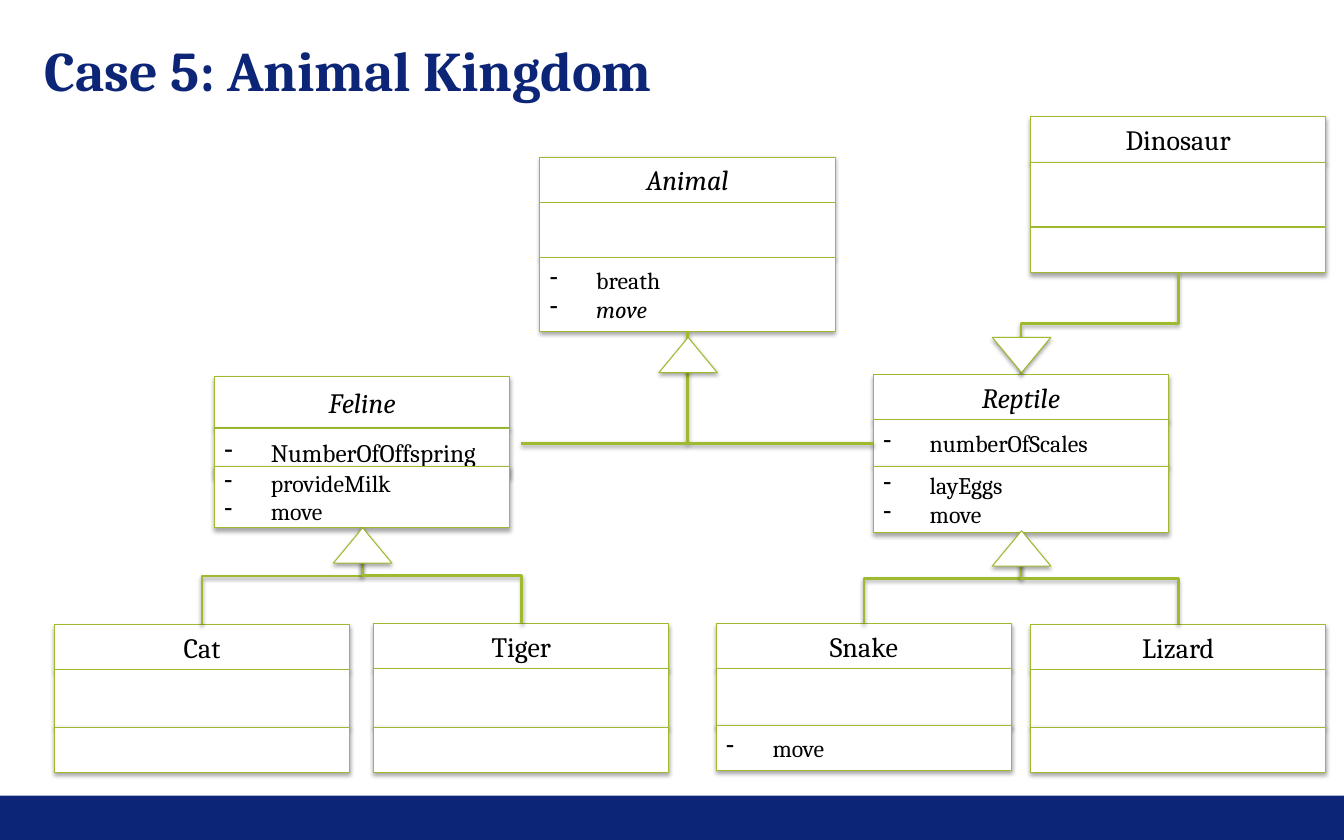
"""Build the Animal Kingdom class diagram slide."""
from lxml import etree
from pptx import Presentation
from pptx.dml.color import RGBColor
from pptx.enum.shapes import MSO_CONNECTOR, MSO_SHAPE
from pptx.enum.text import MSO_ANCHOR, MSO_AUTO_SIZE, PP_ALIGN
from pptx.oxml.ns import qn
from pptx.util import Inches, Pt

RECTANGLE, TRIANGLE = MSO_SHAPE.RECTANGLE, MSO_SHAPE.ISOSCELES_TRIANGLE
ELBOW, STRAIGHT = MSO_CONNECTOR.ELBOW, MSO_CONNECTOR.STRAIGHT
TOP, LEFT, BOTTOM = 0, 1, 2
COLORS = {"navy": "0C2577", "green": "9EBA2E", "white": "FFFFFF", "black": "000000"}
COLORS = {name: RGBColor.from_string(value) for name, value in COLORS.items()}
FONT = "Cambria"
BOX_WIDTH = 2.93
ROW = 0.45
ARROW_WIDTH, ARROW_HEIGHT = 0.58, 0.35
INDENT = Inches(0.46)


def style_outline(item, width):
    """Give a shape or connector its green line and soft shadow."""
    item.line.color.rgb = COLORS["green"]
    item.line.width = Pt(width)
    effects = etree.SubElement(item._element.spPr, qn("a:effectLst"))
    shadow = etree.SubElement(effects, qn("a:outerShdw"), blurRad=str(Pt(3.1)),
                              dist=str(Pt(1.8)), dir="5400000", rotWithShape="0")
    color = etree.SubElement(shadow, qn("a:srgbClr"), val="000000")
    etree.SubElement(color, qn("a:alpha"), val="35000")


def add_white_shape(kind, left, top, width, height):
    """Add a white shape with the diagram's outline."""
    shape = slide.shapes.add_shape(kind, Inches(left), Inches(top), Inches(width), Inches(height))
    shape.fill.solid()
    shape.fill.fore_color.rgb = COLORS["white"]
    style_outline(shape, 0.75)
    return shape


presentation = Presentation()
presentation.slide_width = Inches(13.34)
presentation.slide_height = Inches(8.34)
slide = presentation.slides.add_slide(presentation.slide_layouts[5])

footer_height = Inches(0.44)
footer = slide.shapes.add_shape(RECTANGLE, 0, presentation.slide_height - footer_height,
                                presentation.slide_width, footer_height)
footer.fill.solid()
footer.fill.fore_color.rgb = COLORS["navy"]
footer.line.fill.background()
footer.shadow.inherit = False

title = slide.shapes.title
title.left, title.top, title.width, title.height = map(Inches, (0.44, 0.44, 12.46, 0.49))
frame = title.text_frame
frame.text = "Case 5: Animal Kingdom"
frame.auto_size = MSO_AUTO_SIZE.NONE
frame.vertical_anchor = MSO_ANCHOR.MIDDLE
frame.margin_left = frame.margin_top = frame.margin_right = frame.margin_bottom = 0
frame.paragraphs[0].alignment = PP_ALIGN.LEFT
title_font = frame.paragraphs[0].runs[0].font
title_font.name, title_font.size, title_font.bold = FONT, Pt(40), True
title_font.color.rgb = COLORS["navy"]

# name: (left, top, abstract, attribute top, attribute height, method top, method height, attributes, methods)
CLASSES = {
    "Cat": (0.54, 6.2, False, ROW, 0.57, 1.02, ROW, [], []),
    "Tiger": (3.71, 6.19, False, ROW, 0.58, 1.03, ROW, [], []),
    "Snake": (7.11, 6.19, False, ROW, 0.58, 1.01, ROW, [], ["move"]),
    "Lizard": (10.23, 6.2, False, ROW, 0.57, 1.02, ROW, [], []),
    "Feline": (2.13, 3.74, True, 0.51, 0.49, 0.89, 0.61, ["NumberOfOffspring"], ["provideMilk", "move"]),
    "Reptile": (8.67, 3.72, True, ROW, 0.46, 0.91, 0.66, ["numberOfScales"], ["layEggs", "move"]),
    "Animal": (5.36, 1.56, True, ROW, 0.55, 1.0, 0.73, [], ["breath", "move"]),
    "Dinosaur": (10.23, 1.16, False, ROW, 0.64, 1.1, ROW, [], []),
}
boxes = {}
for name, (left, top, abstract, attribute_top, attribute_height, method_top, method_height,
           attributes, methods) in CLASSES.items():
    rows = [(0, attribute_top, [name]), (attribute_top, attribute_height, attributes),
            (method_top, method_height, methods)]
    boxes[name] = []
    for offset, height, lines in rows:
        box = add_white_shape(RECTANGLE, left, top + offset, BOX_WIDTH, height)
        boxes[name].append(box)
        if not lines:
            continue
        box.text_frame.text = "\n".join(lines)
        box.text_frame.vertical_anchor = MSO_ANCHOR.MIDDLE
        for paragraph in box.text_frame.paragraphs:
            heading = paragraph.text == name
            paragraph.alignment = PP_ALIGN.CENTER if heading else PP_ALIGN.LEFT
            if not heading:
                properties = paragraph._p.get_or_add_pPr()
                properties.set("marL", str(INDENT))
                properties.set("indent", str(-INDENT))
                etree.SubElement(properties, qn("a:buChar"), char="-")
            font = paragraph.runs[0].font
            font.name = FONT
            font.size = Pt(20 if heading else 18 if paragraph.text == "NumberOfOffspring" else 17)
            font.italic = (heading and abstract) or (name == "Animal" and paragraph.text == "move")
            font.color.rgb = COLORS["black"]

trunk_x = Inches(5.36 + BOX_WIDTH / 2)
branch_y = Inches(4.4)
trunk = slide.shapes.add_connector(STRAIGHT, trunk_x, Inches(3.29), trunk_x, branch_y)
trunk.begin_connect(boxes["Animal"][2], BOTTOM)
branch = slide.shapes.add_connector(STRAIGHT, Inches(5.17), branch_y, Inches(8.67), branch_y)
branch.end_connect(boxes["Reptile"][1], LEFT)
for connector in (trunk, branch):
    style_outline(connector, 2)

for upper, lower in [("Feline", "Cat"), ("Feline", "Tiger"), ("Reptile", "Snake"),
                     ("Reptile", "Lizard"), ("Dinosaur", "Reptile")]:
    start, end = boxes[upper][2], boxes[lower][0]
    start_x, start_y = start.left + start.width // 2, start.top + start.height
    end_x, end_y = end.left + end.width // 2, end.top
    connector = slide.shapes.add_connector(ELBOW, 0, 0, 1, 1)
    connector.begin_connect(start, BOTTOM)
    connector.end_connect(end, TOP)
    connector.width, connector.height = end_y - start_y, abs(end_x - start_x)
    connector.left = (start_x + end_x - connector.width) // 2
    connector.top = (start_y + end_y - connector.height) // 2
    transform = connector._element.spPr.find(qn("a:xfrm"))
    transform.set("rot", "16200000" if end_x > start_x else "5400000")
    transform.set("flipH", "1" if end_x > start_x else "0")
    transform.set("flipV", "0")
    style_outline(connector, 2)

for left, top, points_down in [(6.54, 3.35, False), (3.31, 5.24, False),
                               (9.85, 5.27, False), (9.85, 3.35, True)]:
    arrow = add_white_shape(TRIANGLE, left, top, ARROW_WIDTH, ARROW_HEIGHT)
    if points_down:
        arrow._element.spPr.find(qn("a:xfrm")).set("flipV", "1")

presentation.save("out.pptx")
